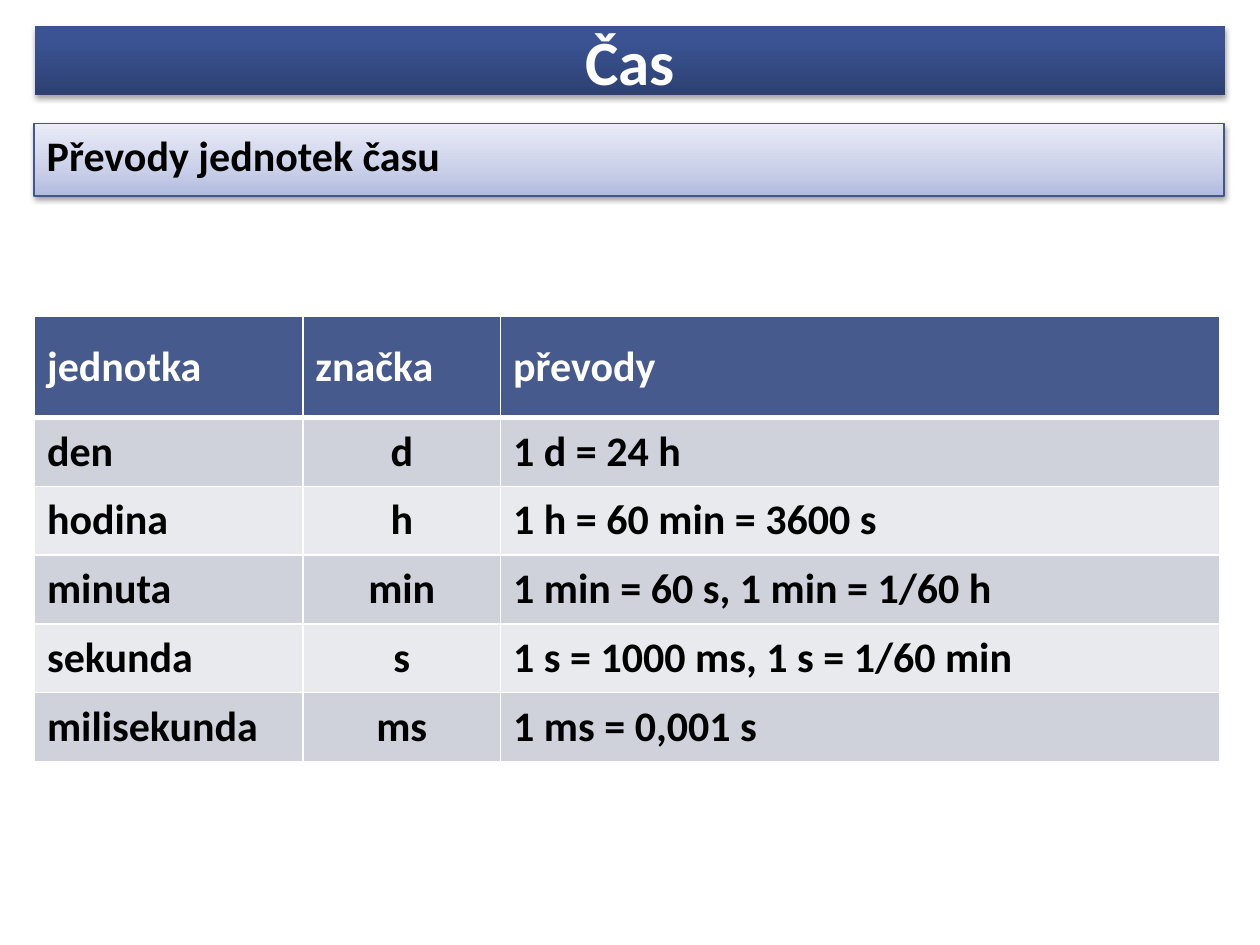
from lxml.etree import SubElement
from pptx import Presentation
from pptx.dml.color import RGBColor
from pptx.enum.text import MSO_ANCHOR, MSO_AUTO_SIZE, PP_ALIGN
from pptx.oxml.ns import qn
from pptx.util import Pt

COLORS = {
    "white": "FFFFFF",
    "black": "000000",
    "header": "475A8D",
    "band_dark": "CFD2DB",
    "band_light": "E9EAEE",
    "outline": "44578C",
}
TITLE_GRADIENT = [(0, "2D4071"), (80, "3B5393"), (100, "395295")]
SUBTITLE_GRADIENT = [(0, "B2BBE0"), (35, "C9CFE8"), (100, "EAECF7")]

COLUMN_WIDTHS = [153.4, 113, 411.1]
HEADER_HEIGHT = 57.6
ROW_HEIGHT = 39.3
TIME_UNITS = [
    ("jednotka", "značka", "převody"),
    ("den", "d", "1 d = 24 h"),
    ("hodina", "h", "1 h = 60 min = 3600 s"),
    ("minuta", "min", "1 min = 60 s, 1 min = 1/60 h"),
    ("sekunda", "s", "1 s = 1000 ms, 1 s = 1/60 min"),
    ("milisekunda", "ms", "1 ms = 0,001 s"),
]


def add_element(parent, tag, **attributes):
    values = {name: str(value) for name, value in attributes.items()}
    return SubElement(parent, qn(tag), values)


class UnitSlide:
    font = "Calibri"
    text_size = 24
    title_size = 36

    def __init__(self, presentation):
        self.slide = presentation.slides.add_slide(presentation.slide_layouts[1])

    def format_text(self, text_frame, size, color, alignment):
        for paragraph in text_frame.paragraphs:
            paragraph.alignment = alignment
            paragraph.space_before = Pt(0)
            for run in paragraph.runs:
                run.font.name = self.font
                run.font.size = Pt(size)
                run.font.bold = True
                run.font.color.rgb = RGBColor.from_string(COLORS[color])

    def place(self, shape, left, top, width, height):
        shape.left, shape.top = Pt(left), Pt(top)
        shape.width, shape.height = Pt(width), Pt(height)

    def fill_gradient(self, shape, stops):
        gradient = add_element(shape._element.spPr, "a:gradFill", rotWithShape=1)
        stop_list = add_element(gradient, "a:gsLst")
        for position, color in stops:
            stop = add_element(stop_list, "a:gs", pos=position * 1000)
            add_element(stop, "a:srgbClr", val=color)
        add_element(gradient, "a:lin", ang=270 * 60000, scaled=0)

    def add_shadow(self, shape, opacity, distance):
        effects = add_element(shape._element.spPr, "a:effectLst")
        shadow = add_element(
            effects, "a:outerShdw", blurRad=Pt(3.1), dist=Pt(distance),
            dir=90 * 60000, rotWithShape=0,
        )
        color = add_element(shadow, "a:srgbClr", val=COLORS["black"])
        add_element(color, "a:alpha", val=opacity * 1000)

    def add_title(self, text, box):
        shape = self.slide.shapes.title
        self.place(shape, *box)
        self.fill_gradient(shape, TITLE_GRADIENT)
        self.add_shadow(shape, 35, 1.8)
        text_frame = shape.text_frame
        text_frame.text = text
        text_frame.auto_size = MSO_AUTO_SIZE.NONE
        text_frame.vertical_anchor = MSO_ANCHOR.MIDDLE
        self.format_text(text_frame, self.title_size, "white", PP_ALIGN.CENTER)

    def add_subtitle(self, text, box):
        shape = self.slide.placeholders[1]
        self.place(shape, *box)
        self.fill_gradient(shape, SUBTITLE_GRADIENT)
        shape.line.color.rgb = RGBColor.from_string(COLORS["outline"])
        shape.line.width = Pt(0.75)
        self.add_shadow(shape, 38, 1.6)
        text_frame = shape.text_frame
        text_frame.text = text
        text_frame.auto_size = MSO_AUTO_SIZE.NONE
        text_frame.vertical_anchor = MSO_ANCHOR.TOP
        self.format_text(text_frame, self.text_size, "black", PP_ALIGN.LEFT)
        properties = text_frame.paragraphs[0]._p.get_or_add_pPr()
        properties.set("marL", "0")
        properties.set("indent", "0")
        add_element(properties, "a:buNone")

    def add_borders(self, cell, top, bottom):
        properties = cell._tc.get_or_add_tcPr()
        for side, width in (("L", 1), ("R", 1), ("T", top), ("B", bottom)):
            line = add_element(properties, f"a:ln{side}", w=Pt(width))
            fill = add_element(line, "a:solidFill")
            add_element(fill, "a:srgbClr", val=COLORS["white"])

    def add_table(self, rows, left, top):
        height = HEADER_HEIGHT + ROW_HEIGHT * (len(rows) - 1)
        table = self.slide.shapes.add_table(
            len(rows), len(COLUMN_WIDTHS), Pt(left), Pt(top),
            Pt(sum(COLUMN_WIDTHS)), Pt(height),
        ).table
        for column, width in zip(table.columns, COLUMN_WIDTHS):
            column.width = Pt(width)
        for row_index, row in enumerate(rows):
            is_header = row_index == 0
            table.rows[row_index].height = Pt(HEADER_HEIGHT if is_header else ROW_HEIGHT)
            band = "band_dark" if row_index % 2 else "band_light"
            for column_index, text in enumerate(row):
                cell = table.cell(row_index, column_index)
                cell.text_frame.text = text
                cell.vertical_anchor = MSO_ANCHOR.MIDDLE
                centered = column_index == 1 and not is_header
                self.format_text(
                    cell.text_frame, self.text_size,
                    "white" if is_header else "black",
                    PP_ALIGN.CENTER if centered else PP_ALIGN.LEFT,
                )
                self.add_borders(cell, 3 if row_index == 1 else 1, 3 if is_header else 1)
                cell.fill.solid()
                cell.fill.fore_color.rgb = RGBColor.from_string(
                    COLORS["header" if is_header else band]
                )


def main():
    presentation = Presentation()
    presentation.slide_width, presentation.slide_height = Pt(720), Pt(540)
    unit_slide = UnitSlide(presentation)
    unit_slide.add_title("Čas", (20, 15, 680, 39.5))
    unit_slide.add_subtitle("Převody jednotek času", (19.5, 70.5, 680, 41.5))
    unit_slide.add_table(TIME_UNITS, 19.7, 181)
    presentation.save("out.pptx")


if __name__ == "__main__":
    main()
